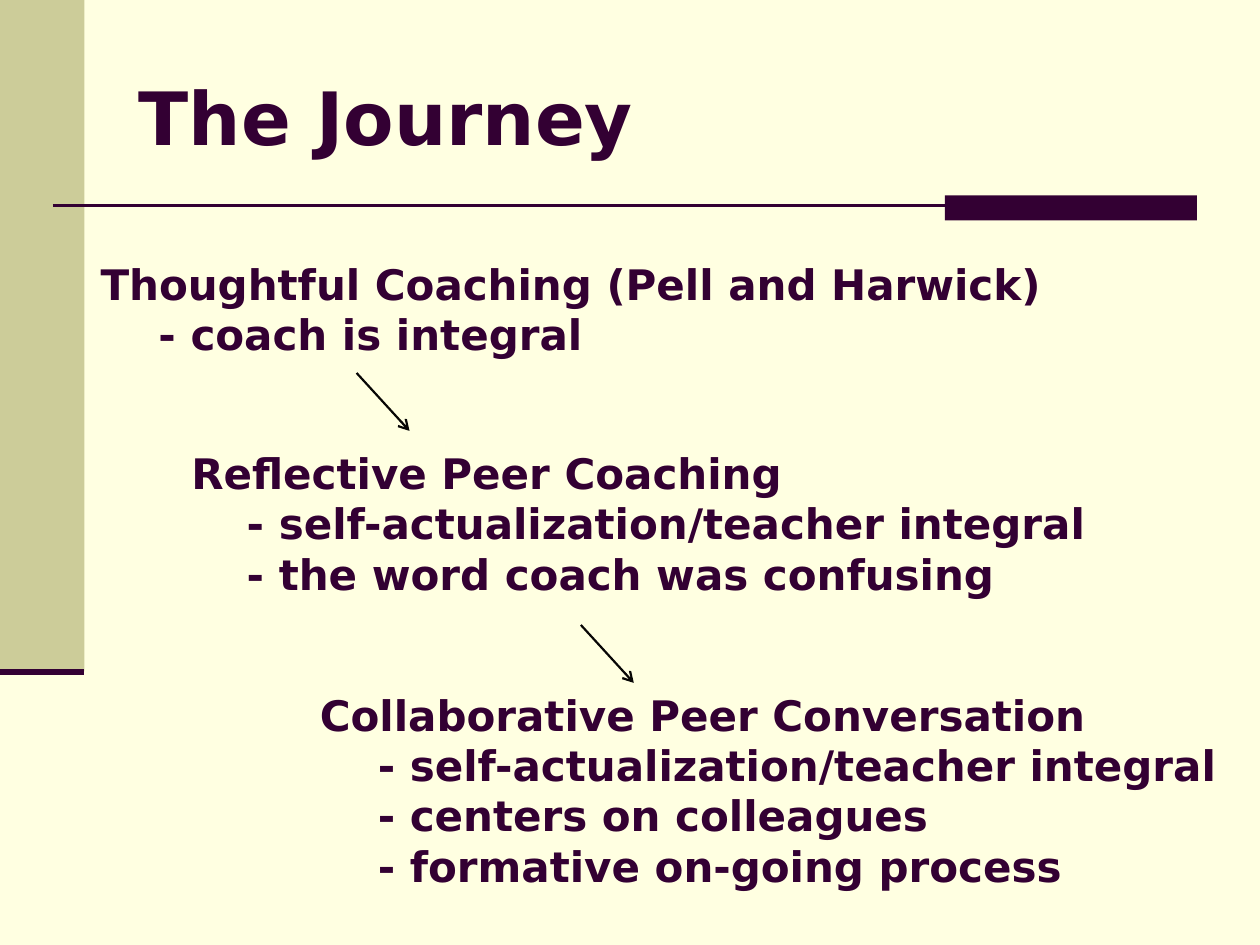
from pptx import Presentation
from pptx.dml.color import RGBColor
from pptx.enum.shapes import MSO_CONNECTOR as Connector, MSO_SHAPE as Shape
from pptx.enum.text import MSO_ANCHOR as Anchor, PP_ALIGN as Align
from pptx.oxml.ns import qn
from pptx.util import Inches, Pt
from lxml.etree import SubElement

CREAM = RGBColor(0xFF, 0xFF, 0xE1)
KHAKI = RGBColor(0xCC, 0xCC, 0x99)
PLUM = RGBColor(0x33, 0x00, 0x33)
INK = RGBColor(0x07, 0x06, 0x05)
FONT = "DejaVu Sans"
TITLE_ONLY = 5


def write(para, text, *, size=24, color=PLUM, bold=True, indent=0):
    """Fill a left-aligned paragraph with one formatted span."""
    para.alignment = Align.LEFT
    if indent:
        para._p.get_or_add_pPr().set("marL", str(Inches(indent)))
    span = para.add_run()
    span.text = text
    span.font.name = FONT
    span.font.size = Pt(size)
    span.font.bold = bold
    span.font.color.rgb = color


class JourneyPage:
    def __init__(self, deck):
        self.page = deck.slides.add_slide(deck.slide_layouts[TITLE_ONLY])
        fill = self.page.background.fill
        fill.solid()
        fill.fore_color.rgb = CREAM

    def block(self, left, top, width, height, color):
        block = self.page.shapes.add_shape(
            Shape.RECTANGLE, *map(Inches, (left, top, width, height)))
        block.shadow.inherit = False
        block.fill.solid()
        block.fill.fore_color.rgb = color
        block.line.fill.background()

    def line(self, start, end, color, weight, arrow=False):
        line = self.page.shapes.add_connector(
            Connector.STRAIGHT, *map(Inches, (*start, *end)))
        line.line.color.rgb = color
        line.line.width = Pt(weight)
        if arrow:
            SubElement(line.line._get_or_add_ln(), qn("a:tailEnd"), type="arrow")
        SubElement(line._element.spPr, qn("a:effectLst"))

    def title(self, text, left, top, width, height):
        title = self.page.shapes.title
        title.left, title.top, title.width, title.height = map(
            Inches, (left, top, width, height))
        title.text_frame.vertical_anchor = Anchor.MIDDLE
        write(title.text_frame.paragraphs[0], text, size=42)

    def stage(self, heading, points, left, top, width, height, indent=0.46):
        """A heading with its dashed points set in below it."""
        box = self.page.shapes.add_textbox(
            *map(Inches, (left, top, width, height)))
        frame = box.text_frame
        frame.word_wrap = True
        write(frame.paragraphs[0], heading)
        for point in points:
            write(frame.add_paragraph(), f"- {point}", indent=indent)


def main():
    deck = Presentation()
    deck.slide_width, deck.slide_height = Inches(10), Inches(7.5)
    journey = JourneyPage(deck)

    # Side band and title rule
    journey.block(0, 0, 0.67, 5.33, KHAKI)
    journey.block(7.5, 1.55, 2, 0.2, PLUM)
    journey.line((0.42, 1.63), (9.5, 1.63), PLUM, 1.5)
    journey.line((0, 5.33), (0.67, 5.33), PLUM, 3.5)

    journey.title("The Journey", 1, 0.3, 8.5, 1.25)

    # Three stages, stepping down to the right
    journey.stage("Collaborative Peer Conversation",
                  ["self-actualization/teacher integral",
                   "centers on colleagues",
                   "formative on-going process"],
                  2.44, 5.42, 7.47, 1.72)
    journey.stage("Reflective Peer Coaching",
                  ["self-actualization/teacher integral",
                   "the word coach was confusing"],
                  1.42, 3.5, 8.33, 1.31, indent=0.44)
    journey.stage("Thoughtful Coaching (Pell and Harwick)",
                  ["coach is integral"],
                  0.7, 2, 8.3, 0.91)

    # Arrows from each stage to the next
    for left, top in ((2.83, 2.96), (4.61, 4.96)):
        journey.line((left, top), (left + 0.42, top + 0.46), INK, 1.25, arrow=True)

    deck.save("out.pptx")


if __name__ == "__main__":
    main()
